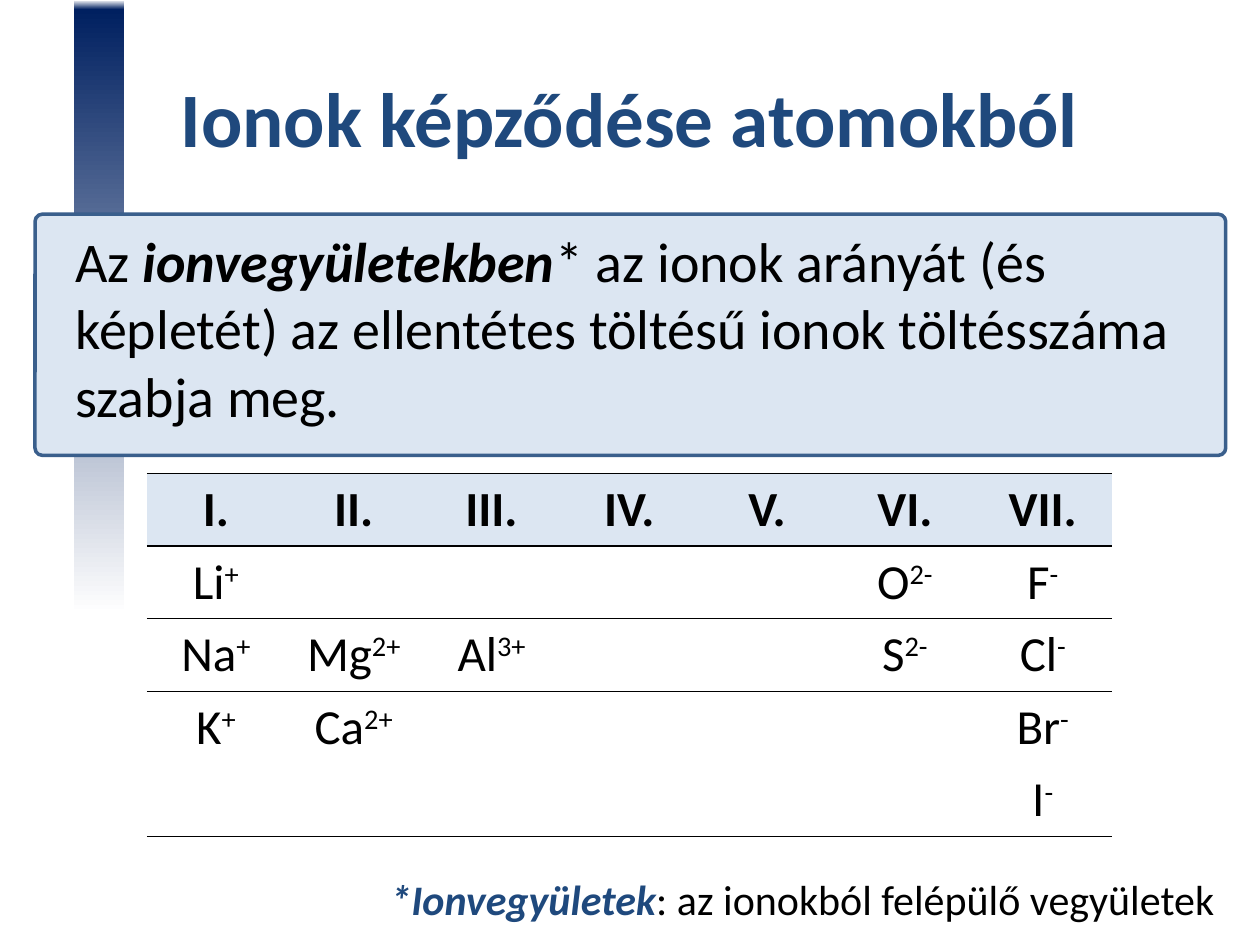
import pptx
import pptx.dml.color
import pptx.enum.shapes
import pptx.enum.text
import pptx.oxml
import pptx.oxml.ns
import pptx.util
from lxml import etree

Pt = pptx.util.Pt
SHAPES = pptx.enum.shapes.MSO_SHAPE
ALIGN = pptx.enum.text.PP_ALIGN
ANCHOR = pptx.enum.text.MSO_ANCHOR

THEME = {
    "font": "Calibri",
    "black": "000000", "white": "FFFFFF", "heading": "1F497D",
    "panel": "DCE6F2", "panel_line": "3A5F8C", "navy": "002060",
    "title": 44, "body": 32, "cell": 28, "note": 24,
}

# Runs: (text, colour name, bold, italic)
TITLE = [("Ionok képződése atomokból", "heading", True, False)]
BODY = [
    ("Az ", "black", False, False),
    ("ionvegyületekben", "black", True, True),
    ("* az ionok arányát (és képletét) az ellentétes töltésű ionok "
     "töltésszáma szabja meg.", "black", False, False),
]
NOTE = [
    ("*Ionvegyületek", "heading", True, True),
    (": az ionokból felépülő vegyületek", "black", False, False),
]
GROUPS = ["I.", "II.", "III.", "IV.", "V.", "VI.", "VII."]
# Each period: group -> (symbol, charge)
PERIODS = [
    {"I.": ("Li", "+"), "VI.": ("O", "2-"), "VII.": ("F", "-")},
    {"I.": ("Na", "+"), "II.": ("Mg", "2+"), "III.": ("Al", "3+"),
     "VI.": ("S", "2-"), "VII.": ("Cl", "-")},
    {"I.": ("K", "+"), "II.": ("Ca", "2+"), "VII.": ("Br", "-")},
    {"VII.": ("I", "-")},
]
RULED_EDGES = {0, 1, 2, 5}  # horizontal table edges that carry a line
BAND_STOPS = [(0, "white"), (35, "white"), (99, "navy"), (100, "white")]
NO_TABLE_STYLE = "{2D5ABB26-0587-4C30-8999-92F81FD0307C}"


def rgb(name):
    return pptx.dml.color.RGBColor.from_string(THEME[name])


def add_run(p, text, size, color="black", bold=False, italic=False):
    r = p.add_run()
    r.text = text
    f = r.font
    f.name, f.size, f.bold, f.italic = THEME["font"], Pt(THEME[size]), bold, italic
    f.color.rgb = rgb(color)
    return r


def add_text(slide, box, runs, size, align=ALIGN.LEFT, anchor=ANCHOR.TOP):
    tf = slide.shapes.add_textbox(*map(Pt, box)).text_frame
    tf.word_wrap = True
    tf.vertical_anchor = anchor
    p = tf.paragraphs[0]
    p.alignment = align
    for text, color, bold, italic in runs:
        add_run(p, text, size, color, bold, italic)
    return p


def add_panel(slide, kind, box):
    sp = slide.shapes.add_shape(kind, *map(Pt, box))
    sp.shadow.inherit = False
    return sp


def set_gradient(sp, stops):
    """Replace the fill with a gradient running from bottom to top."""
    gs = "".join(f'<a:gs pos="{pos * 1000}"><a:srgbClr val="{THEME[c]}"/></a:gs>'
                 for pos, c in stops)
    grad = pptx.oxml.parse_xml(
        f'<a:gradFill {pptx.oxml.ns.nsdecls("a")} rotWithShape="1">'
        f'<a:gsLst>{gs}</a:gsLst><a:lin ang="16200000" scaled="0"/></a:gradFill>')
    sp.fill.solid()
    solid = sp.element.spPr.find(pptx.oxml.ns.qn("a:solidFill"))
    solid.getparent().replace(solid, grad)


def space_before_percent(p, percent):
    """Give spacing relative to the line height."""
    qn = pptx.oxml.ns.qn
    before = etree.SubElement(p._p.get_or_add_pPr(), qn("a:spcBef"))
    etree.SubElement(before, qn("a:spcPct")).set("val", str(percent * 1000))


def add_border(cell, side):
    cell._tc.get_or_add_tcPr().append(pptx.oxml.parse_xml(
        f'<a:{side} {pptx.oxml.ns.nsdecls("a")} w="12700"><a:solidFill>'
        f'<a:srgbClr val="{THEME["black"]}"/></a:solidFill></a:{side}>'))


def add_ion_table(slide, left, top, col_width, row_height):
    rows, cols = len(PERIODS) + 1, len(GROUPS)
    table = slide.shapes.add_table(rows, cols, Pt(left), Pt(top),
                                   Pt(col_width * cols), Pt(row_height * rows)).table
    table.horz_banding = False
    table._tbl.tblPr.find(pptx.oxml.ns.qn("a:tableStyleId")).text = NO_TABLE_STYLE
    for i in range(rows):
        table.rows[i].height = Pt(row_height)
        for j, group in enumerate(GROUPS):
            cell = table.cell(i, j)
            cell.vertical_anchor = ANCHOR.MIDDLE
            for edge, side in ((i, "lnT"), (i + 1, "lnB")):
                if edge in RULED_EDGES:
                    add_border(cell, side)
            p = cell.text_frame.paragraphs[0]
            p.alignment = ALIGN.CENTER
            p.font.size = Pt(THEME["cell"])
            if i == 0:
                cell.fill.solid()
                cell.fill.fore_color.rgb = rgb("panel")
                add_run(p, group, "cell", bold=True)
                continue
            cell.fill.background()
            if group in PERIODS[i - 1]:
                symbol, charge = PERIODS[i - 1][group]
                add_run(p, symbol, "cell")
                r = add_run(p, charge, "cell")
                r.font._element.set("baseline", "30000")


def main():
    prs = pptx.Presentation()
    prs.slide_width, prs.slide_height = Pt(720), Pt(540)
    slide = prs.slides.add_slide(prs.slide_layouts[6])

    band = add_panel(slide, SHAPES.RECTANGLE, (42.5, 0, 28.2, 540))
    set_gradient(band, BAND_STOPS)
    band.line.fill.background()

    panel = add_panel(slide, SHAPES.ROUNDED_RECTANGLE, (20, 122.4, 680.4, 137.8))
    panel.adjustments[0] = 0.03
    panel.fill.solid()
    panel.fill.fore_color.rgb = rgb("panel")
    panel.line.color.rgb = rgb("panel_line")
    panel.line.width = Pt(2)

    add_text(slide, (36, 21.6, 648, 90), TITLE, "title", ALIGN.CENTER, ANCHOR.MIDDLE)
    body = add_text(slide, (36, 126, 648, 194), BODY, "body")
    space_before_percent(body, 20)
    add_ion_table(slide, left=84, top=270.5, col_width=78.75, row_height=41.5)
    add_text(slide, (216, 495.4, 495.4, 36), NOTE, "note")

    prs.save("out.pptx")


if __name__ == "__main__":
    main()
